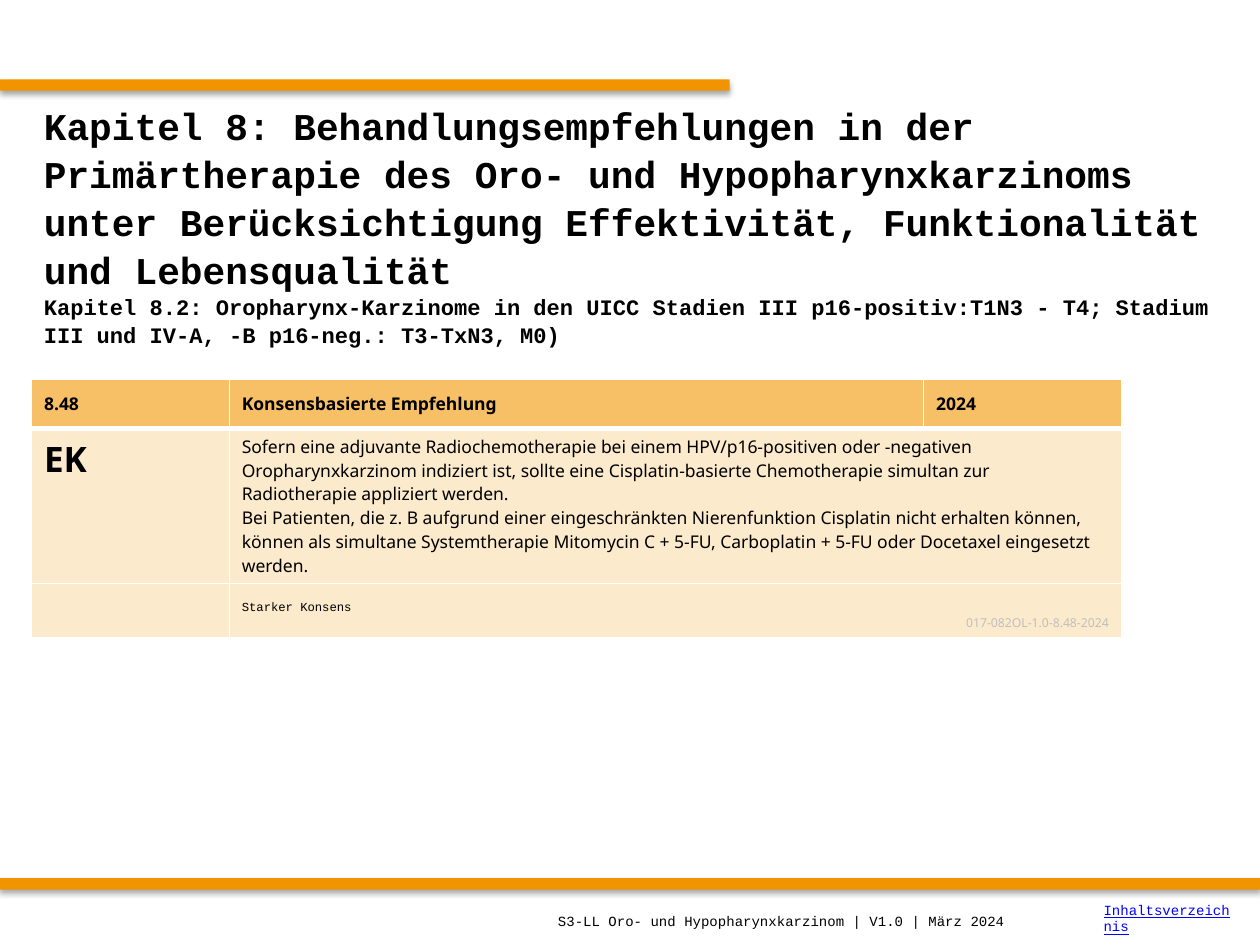
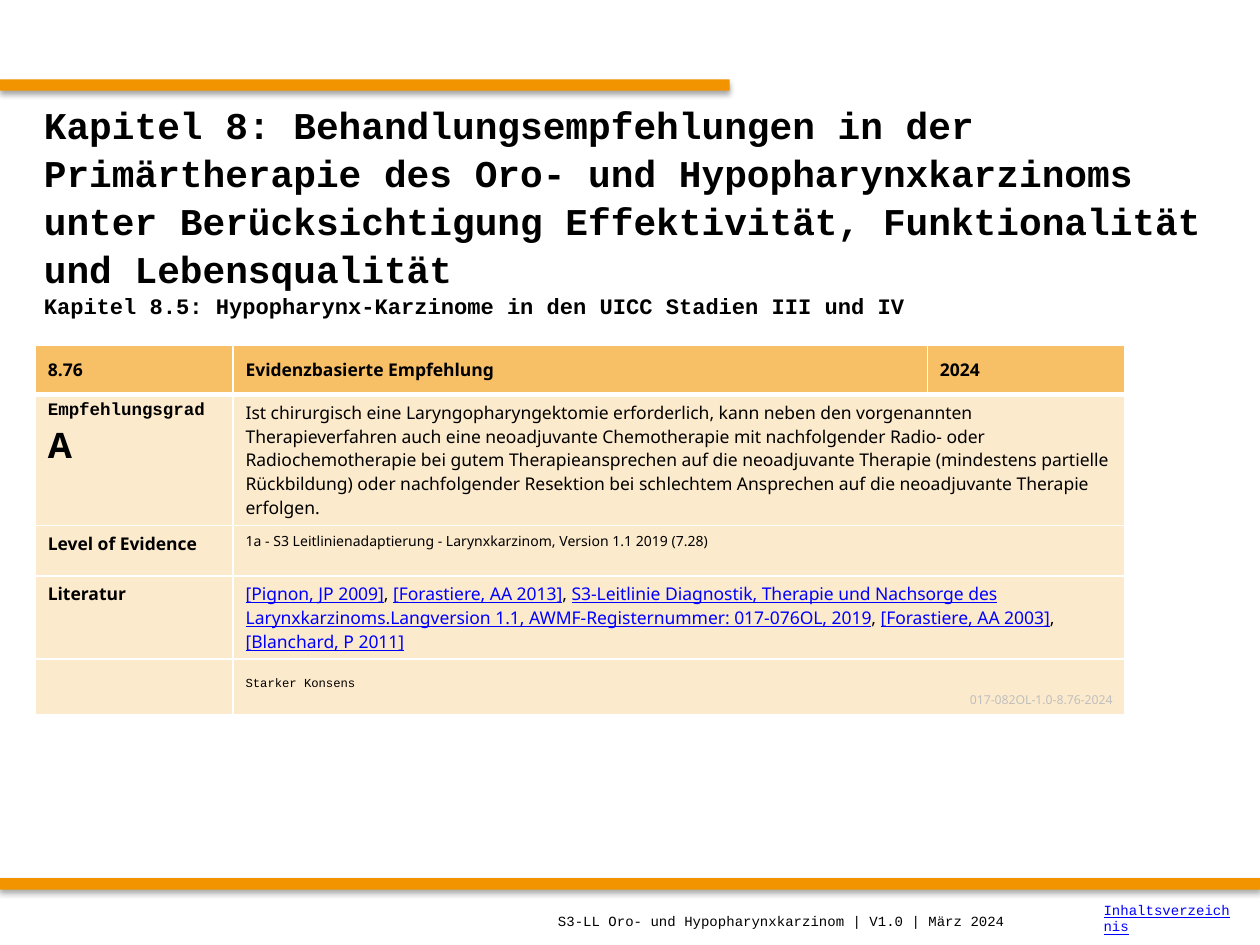
from dataclasses import dataclass
from itertools import product
from lxml import etree
from pptx import Presentation
from pptx.dml.color import RGBColor
from pptx.enum.shapes import MSO_SHAPE
from pptx.enum.text import MSO_ANCHOR as ANCHOR, PP_ALIGN as ALIGN
from pptx.oxml import parse_xml
from pptx.oxml.ns import nsdecls, qn
from pptx.util import Inches, Pt

COLORS = {"band": "F29400", "header": "F7BF66", "body": "FCEACC", "border": "FFFFFF",
          "text": "000000", "link": "0000FF", "code": "BFBFBF", "shadow": "000000"}
MONO, SANS = "Courier New", "Noto Sans"
COLUMNS = (1.57, 5.51, 1.57)
CHAPTER = ("Kapitel 8: Behandlungsempfehlungen in der Primärtherapie des Oro- und "
           "Hypopharynxkarzinoms unter Berücksichtigung Effektivität, Funktionalität "
           "und Lebensqualität")
FOOTER = "S3-LL Oro- und Hypopharynxkarzinom | V1.0 | März 2024"


@dataclass
class Run:
    text: str
    size: float = 10
    font: str = SANS
    color: str = "text"
    bold: bool = False
    underline: bool = False


@dataclass
class Para:
    runs: list[Run]
    align: ALIGN = ALIGN.LEFT
    spacing: float = 1.0


@dataclass
class Row:
    label: list[Para]
    content: list[Para]
    height: float
    anchor: ANCHOR = ANCHOR.TOP


@dataclass
class Recommendation:
    subtitle: str
    title_height: float
    left: float
    top: float
    number: str
    kind: str
    rows: list[Row]
    closing_height: float


def para(text: str, **style) -> Para:
    return Para([Run(text, **style)])


def label(text: str, **style) -> Para:
    return para(text, bold=True, **style)


def reference_list(references: list[str]) -> Para:
    runs = []
    for reference in references:
        if runs:
            runs.append(Run(", "))
        runs.append(Run(reference, color="link", underline=True))
    return Para(runs)


def rgb(name: str) -> RGBColor:
    return RGBColor.from_string(COLORS[name])


def write(tf, paras: list[Para]) -> None:
    for i, item in enumerate(paras):
        p = tf.paragraphs[0] if i == 0 else tf.add_paragraph()
        p.alignment, p.line_spacing = item.align, item.spacing
        for run in item.runs:
            r = p.add_run()
            r.text = run.text
            r.font.size, r.font.name = Pt(run.size), run.font
            r.font.bold, r.font.underline = run.bold, run.underline
            r.font.color.rgb = rgb(run.color)


def add_text(s, box: tuple, paras: list[Para]) -> None:
    tf = s.shapes.add_textbox(*map(Inches, box)).text_frame
    tf.word_wrap = True
    tf.vertical_anchor = ANCHOR.MIDDLE
    write(tf, paras)


def add_band(s, top: float, width: float) -> None:
    sp = s.shapes.add_shape(MSO_SHAPE.RECTANGLE, 0, Inches(top), Inches(width), Inches(0.09))
    sp.fill.solid()
    sp.fill.fore_color.rgb = rgb("band")
    sp.line.fill.background()
    sp.shadow.inherit = False
    effects = sp._element.spPr.find(qn("a:effectLst"))
    effects.append(parse_xml(
        f'<a:outerShdw {nsdecls("a")} blurRad="{Pt(3.1)}" dist="{Pt(1.8)}" dir="5400000" '
        f'rotWithShape="0"><a:srgbClr val="{COLORS["shadow"]}"><a:alpha val="35000"/>'
        '</a:srgbClr></a:outerShdw>'))


def style_cell(cell, fill: str, top: float, bottom: float) -> None:
    tcPr = cell._tc.get_or_add_tcPr()
    for side, width in (("L", 1), ("R", 1), ("T", top), ("B", bottom)):
        ln = etree.SubElement(tcPr, qn(f"a:ln{side}"), w=str(Pt(width)))
        solid = etree.SubElement(ln, qn("a:solidFill"))
        etree.SubElement(solid, qn("a:srgbClr"), val=COLORS["border"])
    cell.fill.solid()
    cell.fill.fore_color.rgb = rgb(fill)


def add_recommendation_table(s, rec: Recommendation) -> None:
    closing = Row([], [
        para("Starker Konsens", size=7, font=MONO),
        Para([Run(f"017-082OL-1.0-{rec.number}-2024", size=7, color="code")], ALIGN.RIGHT),
    ], rec.closing_height, ANCHOR.BOTTOM)
    rows = rec.rows + [closing]
    heights = [0.39] + [row.height for row in rows]
    table = s.shapes.add_table(len(heights), len(COLUMNS), Inches(rec.left), Inches(rec.top),
                               Inches(sum(COLUMNS)), Inches(sum(heights))).table
    table.horz_banding = False
    for column, width in zip(table.columns, COLUMNS):
        column.width = Inches(width)
    for table_row, height in zip(table.rows, heights):
        table_row.height = Inches(height)

    # Fills and rules, with a heavy rule below the header
    for i, j in product(range(len(heights)), range(len(COLUMNS))):
        style_cell(table.cell(i, j), "body" if i else "header",
                   3 if i == 1 else 1, 1 if i else 3)

    # Header row
    for j, text in enumerate((rec.number, rec.kind, "2024")):
        cell = table.cell(0, j)
        cell.vertical_anchor = ANCHOR.MIDDLE
        write(cell.text_frame, [label(text)])

    # Body rows: label, then content across two columns
    for i, row in enumerate(rows, start=1):
        content = table.cell(i, 1)
        content.merge(table.cell(i, 2))
        content.vertical_anchor = row.anchor
        write(table.cell(i, 0).text_frame, row.label)
        write(content.text_frame, row.content)


def add_recommendation_slide(prs, rec: Recommendation) -> None:
    s = prs.slides.add_slide(prs.slide_layouts[6])
    add_band(s, 0.63, 5.79)
    add_band(s, 6.97, 10)
    title = [label(CHAPTER, size=21.6, font=MONO), label(rec.subtitle, size=12.6, font=MONO)]
    for p in title:
        p.spacing = 1.06
    add_text(s, (0.25, 0.83, 9.5, rec.title_height), title)
    add_recommendation_table(s, rec)
    add_text(s, (4.33, 7.11, 5.51, 0.39), [para(FOOTER, size=8, font=MONO)])
    add_text(s, (8.66, 7.09, 1.22, 0.39),
             [para("Inhaltsverzeichnis", size=8, font=MONO, color="link", underline=True)])


RECOMMENDATIONS = [
    Recommendation(
        "Kapitel 8.2: Oropharynx-Karzinome in den UICC Stadien III p16-positiv:T1N3 - T4; "
        "Stadium III und IV-A, -B p16-neg.: T3-TxN3, M0)",
        1.89, 0.25, 3.01, "8.48", "Konsensbasierte Empfehlung",
        [Row([label("EK", size=20)], [
            para("Sofern eine adjuvante Radiochemotherapie bei einem HPV/p16-positiven oder "
                 "-negativen Oropharynxkarzinom indiziert ist, sollte eine Cisplatin-basierte "
                 "Chemotherapie simultan zur Radiotherapie appliziert werden."),
            para("Bei Patienten, die z. B aufgrund einer eingeschränkten Nierenfunktion "
                 "Cisplatin nicht erhalten können, können als simultane Systemtherapie "
                 "Mitomycin C + 5-FU, Carboplatin + 5-FU oder Docetaxel eingesetzt werden."),
        ], 1.23)],
        0.43),
    Recommendation(
        "Kapitel 8.5: Hypopharynx-Karzinome in den UICC Stadien III und IV",
        1.66, 0.28, 2.74, "8.76", "Evidenzbasierte Empfehlung",
        [Row([label("Empfehlungsgrad", font=MONO), label("A", size=20)], [
            para("Ist chirurgisch eine Laryngopharyngektomie erforderlich, kann neben den "
                 "vorgenannten Therapieverfahren auch eine neoadjuvante Chemotherapie mit "
                 "nachfolgender Radio- oder Radiochemotherapie bei gutem Therapieansprechen "
                 "auf die neoadjuvante Therapie (mindestens partielle Rückbildung) oder "
                 "nachfolgender Resektion bei schlechtem Ansprechen auf die neoadjuvante "
                 "Therapie erfolgen.")], 1.04),
         Row([label("Level of Evidence")], [
             para("1a - S3 Leitlinienadaptierung - Larynxkarzinom, Version 1.1 2019 (7.28)",
                  size=8)], 0.4),
         Row([label("Literatur")], [reference_list([
             "[Pignon, JP 2009]", "[Forastiere, AA 2013]",
             "S3-Leitlinie Diagnostik, Therapie und Nachsorge des Larynxkarzinoms.Langversion "
             "1.1, AWMF-Registernummer: 017-076OL, 2019",
             "[Forastiere, AA 2003]", "[Blanchard, P 2011]"])], 0.66)],
        0.44),
]


def main() -> None:
    prs = Presentation()
    prs.slide_width, prs.slide_height = Inches(10), Inches(7.5)
    for rec in RECOMMENDATIONS:
        add_recommendation_slide(prs, rec)
    prs.save("out.pptx")


if __name__ == "__main__":
    main()
